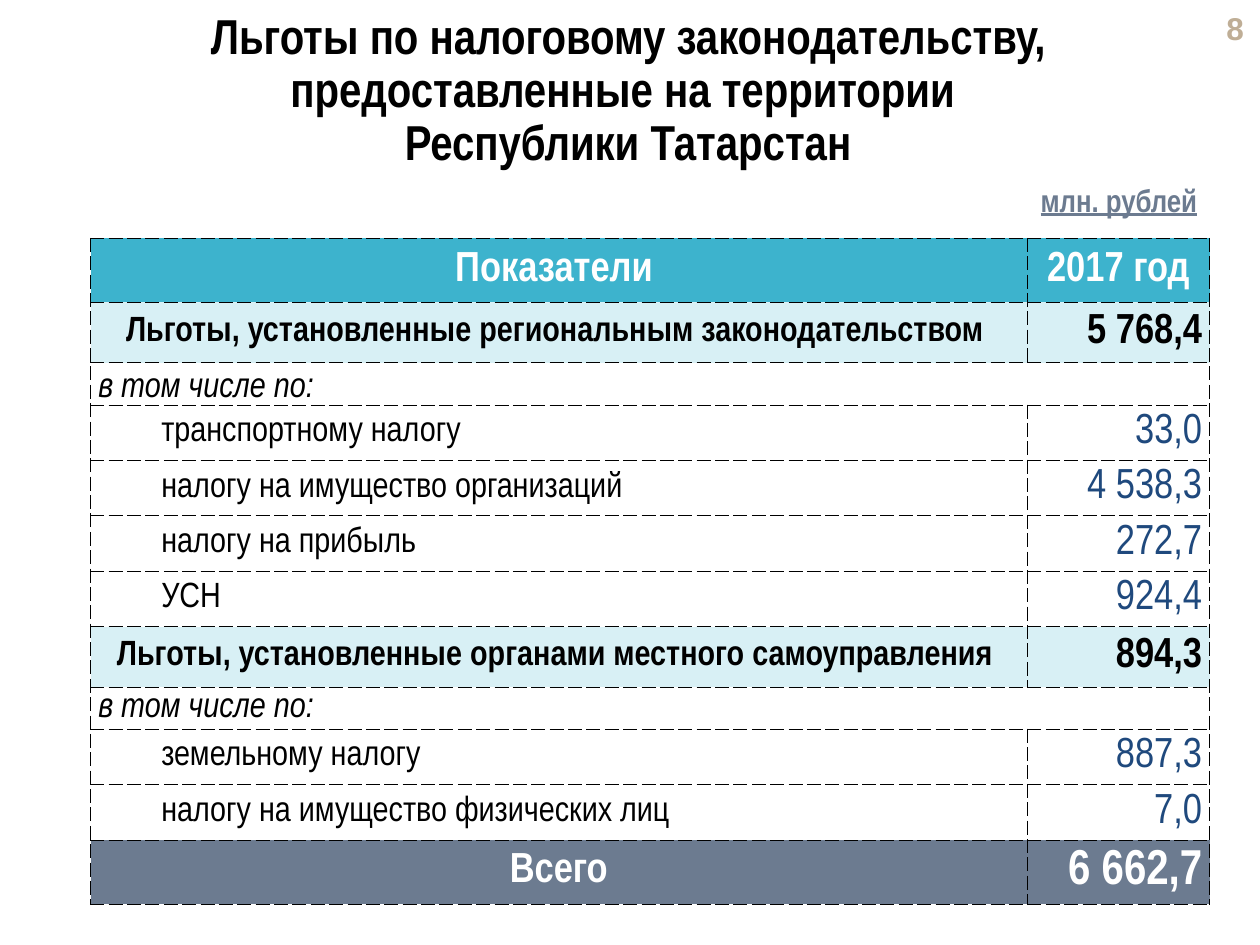
import dataclasses

import lxml.etree
import pptx
import pptx.dml.color
import pptx.enum.text
import pptx.oxml.ns
import pptx.util
from pptx.util import Inches

ALIGN = pptx.enum.text.PP_ALIGN
ANCHOR = pptx.enum.text.MSO_ANCHOR
NARROW = "Arial Narrow"
BLACK, WHITE, SLATE, NAVY = "000000", "FFFFFF", "6C7B90", "1F497D"


@dataclasses.dataclass(frozen=True)
class RowStyle:
    height: float
    label_size: int = 20
    value_size: int = 24
    label_color: str = BLACK
    value_color: str = BLACK
    fill: str | None = None
    bold: bool = False
    italic: bool = False
    label_align: ALIGN = ALIGN.LEFT
    value_align: ALIGN = ALIGN.RIGHT
    indent: float = 0
    merged: bool = False
    anchor: ANCHOR = ANCHOR.MIDDLE


@dataclasses.dataclass(frozen=True)
class Row:
    style: RowStyle
    label: str
    value: str = ""


HEADER = RowStyle(0.51, 24, 24, WHITE, WHITE, "3DB3CD", True,
                  label_align=ALIGN.CENTER, value_align=ALIGN.CENTER)
GROUP = RowStyle(0.48, fill="D8F0F5", bold=True, label_align=ALIGN.CENTER)
NOTE = RowStyle(0.33, italic=True, merged=True)
ITEM = RowStyle(0.44, value_color=NAVY, indent=0.5)
TOTAL = RowStyle(0.51, 24, 28, WHITE, WHITE, SLATE, True,
                 label_align=ALIGN.CENTER)

ROWS = [
    Row(HEADER, "Показатели ", "2017 год"),
    Row(GROUP, "Льготы, установленные региональным законодательством ", "5 768,4"),
    Row(dataclasses.replace(NOTE, anchor=ANCHOR.BOTTOM), "в том числе по:"),
    Row(ITEM, "транспортному налогу", "33,0"),
    Row(ITEM, "налогу на имущество организаций", "4 538,3"),
    Row(ITEM, "налогу на прибыль", "272,7"),
    Row(ITEM, "УСН", "924,4"),
    Row(GROUP, "Льготы, установленные органами местного самоуправления ", "894,3"),
    Row(dataclasses.replace(NOTE, fill=WHITE), "в том числе по:"),
    Row(ITEM, "земельному налогу", "887,3"),
    Row(ITEM, "налогу на имущество физических лиц", "7,0"),
    Row(TOTAL, "Всего", "6 662,7"),
]


def rgb(color: str) -> pptx.dml.color.RGBColor:
    return pptx.dml.color.RGBColor.from_string(color)


def format_text(text_frame, size: int, color: str, align: ALIGN,
                bold: bool = False, italic: bool = False,
                underline: bool = False, name: str = NARROW) -> None:
    for paragraph in text_frame.paragraphs:
        paragraph.alignment = align
        for run in paragraph.runs:
            font = run.font
            font.name, font.size = name, pptx.util.Pt(size)
            font.bold, font.italic, font.underline = bold, italic, underline
            font.color.rgb = rgb(color)


def add_text(slide, box: tuple[float, float, float, float], text: str,
             size: int, color: str, align: ALIGN, **style):
    shape = slide.shapes.add_textbox(*(Inches(length) for length in box))
    text_frame = shape.text_frame
    text_frame.word_wrap = True
    text_frame.text = text
    format_text(text_frame, size, color, align, bold=True, **style)
    return text_frame


def add_borders(cell) -> None:
    properties = cell._tc.get_or_add_tcPr()
    qn = pptx.oxml.ns.qn
    for side in ("a:lnL", "a:lnR", "a:lnT", "a:lnB"):
        line = lxml.etree.SubElement(properties, qn(side),
                                     w=str(pptx.util.Pt(0.5)))
        solid = lxml.etree.SubElement(line, qn("a:solidFill"))
        lxml.etree.SubElement(solid, qn("a:srgbClr"), val=BLACK)
        lxml.etree.SubElement(line, qn("a:prstDash"), val="sysDash")


def fill_cell(cell, text: str, size: int, color: str, align: ALIGN,
              style: RowStyle) -> None:
    add_borders(cell)
    if style.fill:
        cell.fill.solid()
        cell.fill.fore_color.rgb = rgb(style.fill)
    else:
        cell.fill.background()
    cell.margin_left = cell.margin_right = Inches(0.06)
    cell.margin_top = cell.margin_bottom = 0
    cell.vertical_anchor = style.anchor
    cell.text_frame.text = text
    format_text(cell.text_frame, size, color, align, style.bold, style.italic)


def add_benefits_table(slide, rows: list[Row]) -> None:
    widths = (7.43, 1.45)
    height = sum(row.style.height for row in rows)
    table = slide.shapes.add_table(
        len(rows), len(widths), Inches(0.72), Inches(1.89),
        Inches(sum(widths)), Inches(height)).table
    table.first_row = table.horz_banding = False
    for column, width in zip(table.columns, widths):
        column.width = Inches(width)
    for index, row in enumerate(rows):
        style = row.style
        table.rows[index].height = Inches(style.height)
        label, value = table.cell(index, 0), table.cell(index, 1)
        fill_cell(label, row.label, style.label_size, style.label_color,
                  style.label_align, style)
        fill_cell(value, row.value, style.value_size, style.value_color,
                  style.value_align, style)
        if style.indent:
            paragraph = label.text_frame.paragraphs[0]
            paragraph.level = 1
            paragraph_properties = paragraph._p.get_or_add_pPr()
            paragraph_properties.set("marL", str(Inches(style.indent)))
            paragraph_properties.set("indent", "0")
        if style.merged:
            label.merge(value)


def main() -> None:
    presentation = pptx.Presentation()
    presentation.slide_width = Inches(10)
    presentation.slide_height = Inches(7.5)
    slide = presentation.slides.add_slide(presentation.slide_layouts[6])

    # Page number
    number = add_text(slide, (9.33, 0.05, 0.64, 0.34), "8", 18, "BFAE96",
                      ALIGN.RIGHT, name="Arial")
    number.vertical_anchor = ANCHOR.MIDDLE

    # Title
    title = add_text(
        slide, (0.56, 0.05, 8.85, 0.63),
        "Льготы по налоговому законодательству, предоставленные "
        "на территории \vРеспублики Татарстан", 28, BLACK, ALIGN.CENTER)
    title.paragraphs[0].line_spacing = 0.9

    # Table and its unit of measure
    add_benefits_table(slide, ROWS)
    add_text(slide, (7.84, 1.39, 1.76, 0.4), "млн. рублей", 18, SLATE,
             ALIGN.RIGHT, underline=True)

    presentation.save("out.pptx")


if __name__ == "__main__":
    main()
